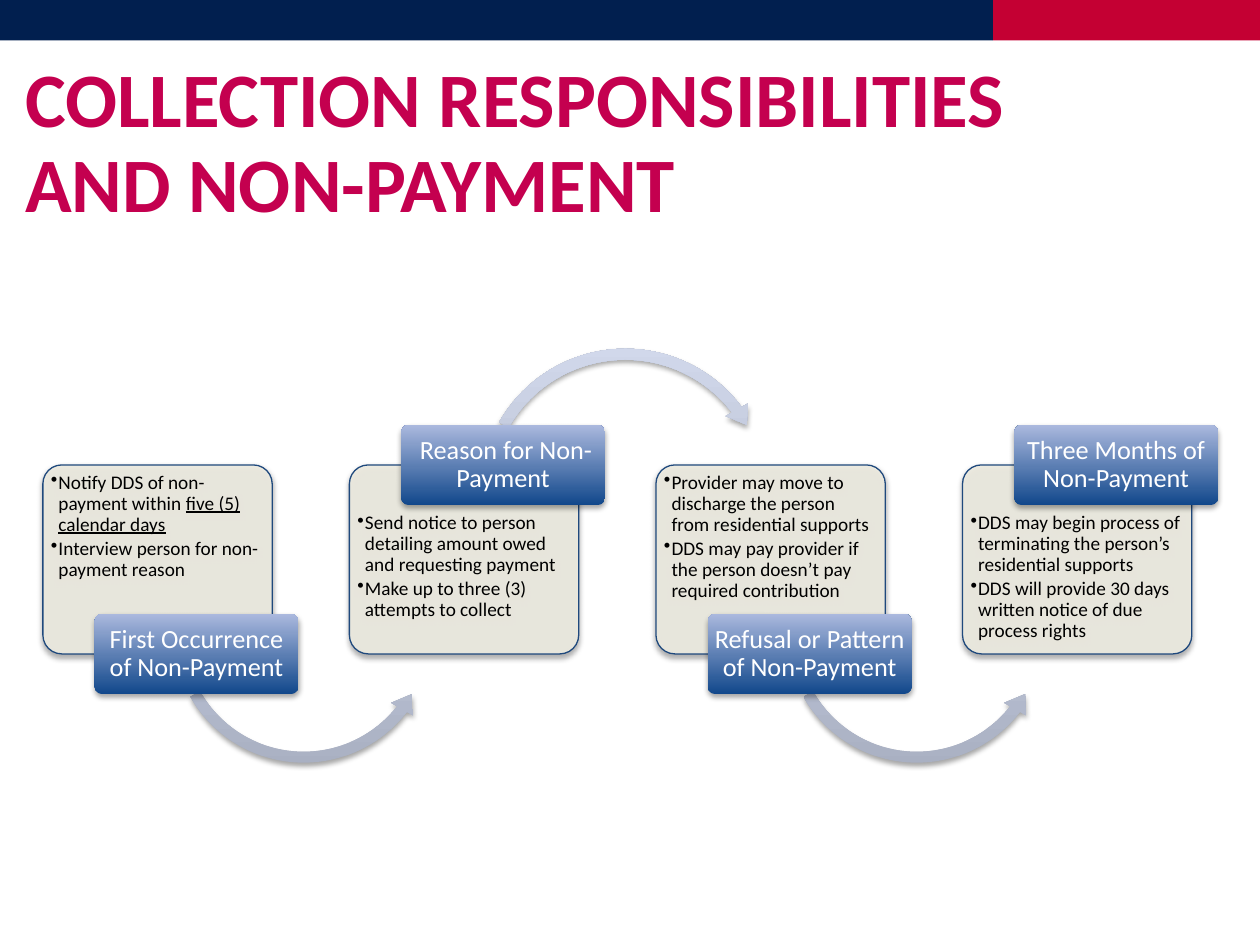
from lxml import etree
from pptx import Presentation
from pptx.dml.color import RGBColor
from pptx.enum import shapes, text
from pptx.oxml.ns import qn
from pptx.util import Inches, Pt

COLORS = {
    "navy": "011F4F", "red": "C40033", "title": "C4004F",
    "card": "EEECE1", "outline": "1F497D", "black": "000000", "white": "FFFFFF",
    "label_dark": "11478B", "label_light": "ABB9DE",
    "arrow_dark": "A9B0C2", "arrow_light": "D1D8EB",
}
FONT = "Calibri"
FIRST_LEFT, PITCH = 0.34, 2.433
CARD_TOP, CARD_WIDTH, CARD_HEIGHT = 3.69, 1.82, 1.5
LABEL_OFFSET, LABEL_WIDTH, LABEL_HEIGHT = 0.41, 1.62, 0.64

STEPS = [
    ("First Occurrence of Non-Payment",
     [[("Notify DDS of non-payment within ", False), ("five (5) calendar days", True)],
      [("Interview person for non-payment reason", False)]]),
    (" Reason for Non-Payment",
     [[("Send notice to person detailing amount owed and requesting payment", False)],
      [("Make up to three (3) attempts to collect", False)]]),
    ("Refusal or Pattern of Non-Payment",
     [[("Provider may move to discharge the person from residential supports", False)],
      [("DDS may pay provider if the person doesn’t pay required contribution", False)]]),
    ("Three Months of Non-Payment",
     [[("DDS may begin process of terminating the person’s residential supports", False)],
      [("DDS will provide 30 days written notice of due process rights", False)]]),
]


def rgb(name):
    return RGBColor.from_string(COLORS[name])


def add_preset(slide, kind, left, top, width, height, adjustments=()):
    shape = slide.shapes.add_shape(
        kind, Inches(left), Inches(top), Inches(width), Inches(height))
    for index, value in enumerate(adjustments):
        shape.adjustments[index] = value
    shape.shadow.inherit = False
    shape.line.fill.background()
    return shape


def fill_solid(shape, color):
    shape.fill.solid()
    shape.fill.fore_color.rgb = rgb(color)


def fill_upward(shape, bottom, top):
    shape.fill.gradient()
    shape.fill.gradient_angle = 90
    for stop, color in zip(shape.fill.gradient_stops, (bottom, top)):
        stop.color.rgb = rgb(color)


def set_alpha(color_element, percent):
    etree.SubElement(color_element, qn("a:alpha"), val=str(percent * 1000))


def add_shadow(shape):
    effects = shape.element.spPr.find(qn("a:effectLst"))
    shadow = etree.SubElement(
        effects, qn("a:outerShdw"), blurRad=str(Pt(3.1)), dist=str(Pt(1.8)),
        dir="5400000", rotWithShape="0")
    set_alpha(etree.SubElement(shadow, qn("a:srgbClr"), val=COLORS["black"]), 35)


def set_margins(frame, side, top, bottom):
    frame.margin_left = frame.margin_right = Inches(side)
    frame.margin_top, frame.margin_bottom = Inches(top), Inches(bottom)


def style_paragraph(paragraph, size, color, align, spacing=0.9, bold=None):
    paragraph.alignment = align
    paragraph.line_spacing = spacing
    font = paragraph.font
    font.name, font.size, font.bold = FONT, Pt(size), bold
    font.color.rgb = rgb(color)


def add_bullet(paragraph):
    properties = paragraph._p.get_or_add_pPr()
    properties.set("marL", str(Inches(0.06)))
    properties.set("indent", str(-Inches(0.06)))
    etree.SubElement(properties, qn("a:buChar"), char="•")


def add_band(slide, left, width, color):
    band = add_preset(slide, shapes.MSO_SHAPE.RECTANGLE, left, 0, width, 0.32)
    fill_solid(band, color)


def add_title(slide):
    title = slide.shapes.title
    title.left, title.top = Inches(0.2), Inches(0.45)
    title.width, title.height = Inches(8), Inches(2)
    frame = title.text_frame
    set_margins(frame, 0, 0, 0)
    frame.vertical_anchor = text.MSO_ANCHOR.TOP
    frame.text = "COLLECTION RESPONSIBILITIES \vAND NON-PAYMENT"
    style_paragraph(frame.paragraphs[0], 44, "title", text.PP_ALIGN.LEFT, Pt(49), True)


def add_card(slide, left, details, label_above):
    card = add_preset(slide, shapes.MSO_SHAPE.ROUNDED_RECTANGLE,
                      left, CARD_TOP, CARD_WIDTH, CARD_HEIGHT, [0.1])
    fill_solid(card, "card")
    set_alpha(card.element.spPr.find(qn("a:solidFill"))[0], 90)
    card.line.color.rgb = rgb("outline")
    card.line.width = Pt(0.75)
    add_shadow(card)
    frame = card.text_frame
    set_margins(frame, 0.02, 0.34 if label_above else 0.02, 0.02)
    frame.vertical_anchor = text.MSO_ANCHOR.TOP
    for index, runs in enumerate(details):
        paragraph = frame.add_paragraph() if index else frame.paragraphs[0]
        add_bullet(paragraph)
        style_paragraph(paragraph, 11, "black", text.PP_ALIGN.LEFT)
        paragraph.space_after = Pt(2)
        for words, underlined in runs:
            run = paragraph.add_run()
            run.text = words
            if underlined:
                run.font.underline = True


def add_arrow(slide, card_left, label_above):
    if label_above:
        arrow = add_preset(slide, shapes.MSO_SHAPE.CIRCULAR_ARROW,
                           card_left + 0.98, 2.71, 2.42, 2.42,
                           [0.036, 4.464, 193.781, 125.755, 0.042])
    else:
        arrow = add_preset(slide, shapes.MSO_SHAPE.LEFT_CIRCULAR_ARROW,
                           card_left + 0.98, 3.93, 2.18, 2.18,
                           [0.04, 4.984, 22.739, 90.245, 0.046])
    fill_upward(arrow, "arrow_dark", "arrow_light")
    add_shadow(arrow)


def add_label(slide, card_left, heading, label_above):
    edge = CARD_TOP if label_above else CARD_TOP + CARD_HEIGHT
    label = add_preset(slide, shapes.MSO_SHAPE.ROUNDED_RECTANGLE,
                       card_left + LABEL_OFFSET, edge - LABEL_HEIGHT / 2,
                       LABEL_WIDTH, LABEL_HEIGHT, [0.1])
    fill_upward(label, "label_dark", "label_light")
    add_shadow(label)
    frame = label.text_frame
    set_margins(frame, 0.03, 0.02, 0.02)
    frame.text = heading
    style_paragraph(frame.paragraphs[0], 15, "white", text.PP_ALIGN.CENTER)


def main():
    deck = Presentation()
    deck.slide_width, deck.slide_height = Inches(10), Inches(7.5)
    slide = deck.slides.add_slide(deck.slide_layouts[5])
    add_band(slide, 7.88, 2.12, "red")
    add_band(slide, 0, 7.88, "navy")
    add_title(slide)
    for index, (heading, details) in enumerate(STEPS):
        left = FIRST_LEFT + index * PITCH
        label_above = index % 2 == 1
        add_card(slide, left, details, label_above)
        if index < len(STEPS) - 1:
            add_arrow(slide, left, label_above)
        add_label(slide, left, heading, label_above)
    deck.save("out.pptx")


if __name__ == "__main__":
    main()
